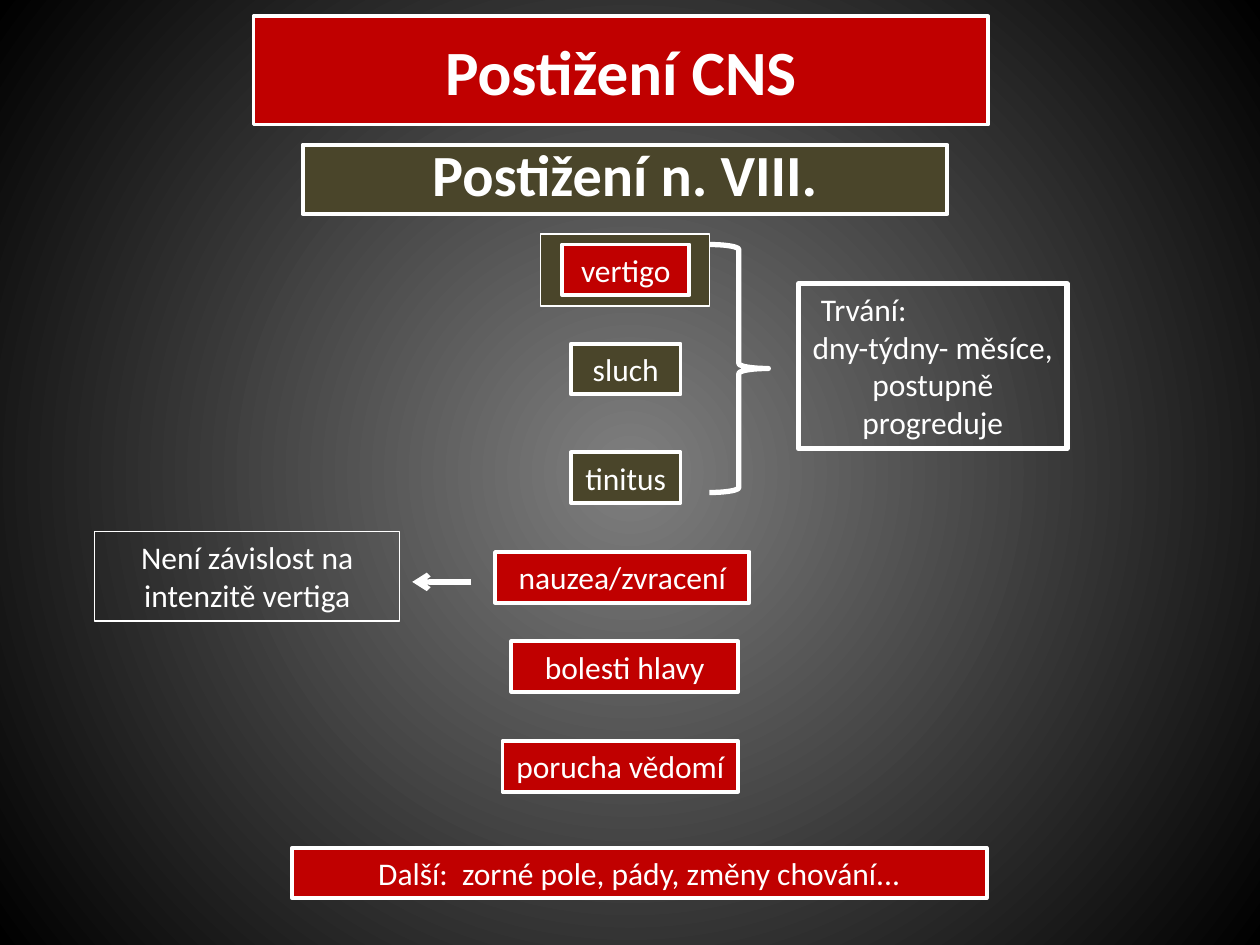
from dataclasses import dataclass

from lxml import etree
from pptx import Presentation
from pptx import util as u
from pptx.dml.color import RGBColor
from pptx.enum import shapes, text
from pptx.oxml.ns import qn


@dataclass(frozen=True)
class Theme:
    font: str = "Calibri"
    red: str = "C00000"
    olive: str = "4A452A"
    white: str = "FFFFFF"
    glow: str = "7F7F7F"
    dark: str = "000000"
    title: float = 36
    subtitle: float = 33.3
    body: float = 18
    thin: float = 0.75
    medium: float = 2.25
    thick: float = 3


THEME = Theme()


@dataclass(frozen=True)
class Label:
    """A filled or hollow box; lengths in centimetres."""
    left: float
    top: float
    width: float
    height: float = 1.02
    lines: tuple[str, ...] = ()
    fill: str | None = THEME.red
    border: float = THEME.medium
    size: float = THEME.body
    heading: bool = False


def set_all(target, values: dict) -> None:
    for name, value in values.items():
        setattr(target, name, value)


def outline(shape, width: float) -> None:
    shape.line.color.rgb = RGBColor.from_string(THEME.white)
    shape.line.width = u.Pt(width)


def write(box, label: Label) -> None:
    fitting = text.MSO_AUTO_SIZE.NONE if label.heading else text.MSO_AUTO_SIZE.SHAPE_TO_FIT_TEXT
    anchor = text.MSO_ANCHOR.MIDDLE if label.heading else text.MSO_ANCHOR.TOP
    frame = box.text_frame
    set_all(frame, {"word_wrap": True, "auto_size": fitting, "vertical_anchor": anchor})
    for index, line in enumerate(label.lines):
        para = frame.add_paragraph() if index else frame.paragraphs[0]
        para.alignment = text.PP_ALIGN.CENTER
        span = para.add_run()
        span.text = line
        set_all(span.font, {"name": THEME.font, "size": u.Pt(label.size), "bold": label.heading})
        span.font.color.rgb = RGBColor.from_string(THEME.white)


def place(box, label: Label):
    """Position, colour and fill in any box, placeholder or shape."""
    set_all(box, {name: u.Cm(getattr(label, name)) for name in ("left", "top", "width", "height")})
    if label.fill:
        box.fill.solid()
        box.fill.fore_color.rgb = RGBColor.from_string(label.fill)
    else:
        box.fill.background()
    outline(box, label.border)
    write(box, label)
    return box


def add_shape(page, label: Label, kind=shapes.MSO_SHAPE.RECTANGLE):
    box = page.shapes.add_shape(kind, 0, 0, 0, 0)
    box.shadow.inherit = False
    return place(box, label)


def add_arrow(page, start: float, end: float, level: float) -> None:
    arrow = page.shapes.add_connector(
        shapes.MSO_CONNECTOR.STRAIGHT, u.Cm(start), u.Cm(level), u.Cm(end), u.Cm(level))
    outline(arrow, THEME.thick)
    etree.SubElement(arrow.line._get_or_add_ln(), qn("a:tailEnd"), type="arrow")
    etree.SubElement(arrow._element.spPr, qn("a:effectLst"))


def paint_background(page) -> None:
    """Radial gradient, light in the middle."""
    fill = page.background.fill
    fill.gradient()
    for stop, colour in zip(fill.gradient_stops, (THEME.glow, THEME.dark)):
        stop.color.rgb = RGBColor.from_string(colour)
    gradient = page._element.find(".//" + qn("a:gradFill"))
    linear = gradient.find(qn("a:lin"))
    radial = etree.Element(qn("a:path"), path="circle")
    etree.SubElement(radial, qn("a:fillToRect"), {side: "50000" for side in "ltrb"})
    gradient.replace(linear, radial)


TITLE = Label(5.11, 0.33, 14.81, 2.18, ("Postižení CNS",), size=THEME.title, heading=True)
SUBTITLE = Label(6.1, 2.92, 13, 1.4, ("Postižení n. VIII.",), THEME.olive,
                 size=THEME.subtitle, heading=True)
VERTIGO_FRAME = Label(10.9, 4.72, 3.4, 1.45, fill=THEME.olive, border=THEME.thin)
SYMPTOMS = (
    Label(11.33, 4.93, 2.57, lines=("vertigo",)),
    Label(11.51, 6.93, 2.21, lines=("sluch",), fill=THEME.olive),
    Label(11.51, 9.12, 2.21, lines=("tinitus",), fill=THEME.olive),
    Label(9.98, 11.13, 5.13, lines=("nauzea/zvracení",)),
    Label(10.31, 12.93, 4.57, lines=("bolesti hlavy",)),
    Label(10.13, 14.94, 4.75, lines=("porucha vědomí",)),
    Label(5.89, 17.09, 14, lines=("Další:  zorné pole, pády, změny chování...",)),
)
DURATION = Label(16.1, 5.72, 5.41, 3.33,
                 ("Trvání:", "dny-týdny- měsíce,", "postupně progreduje"),
                 None, THEME.thick)
INDEPENDENCE = Label(1.91, 10.72, 6.15, 1.8, ("Není závislost na intenzitě vertiga",),
                     None, THEME.thin)
BRACE = Label(14.3, 4.93, 1.19, 5, fill=None, border=THEME.thick)


def main() -> None:
    deck = Presentation()
    set_all(deck, {"slide_width": u.Cm(25.4), "slide_height": u.Cm(19.05)})
    page = deck.slides.add_slide(deck.slide_layouts[5])
    paint_background(page)

    # Headings
    place(page.shapes.title, TITLE)
    subtitle = add_shape(page, SUBTITLE)
    subtitle.text_frame.paragraphs[0].line_spacing = 0.8

    # Symptoms, with vertigo set in a frame
    for label in (VERTIGO_FRAME, *SYMPTOMS):
        add_shape(page, label)

    # Duration of the first three symptoms
    add_shape(page, BRACE, shapes.MSO_SHAPE.RIGHT_BRACE)
    duration = add_shape(page, DURATION)
    heading = duration.text_frame.paragraphs[0]
    heading.alignment = text.PP_ALIGN.LEFT
    heading._p.get_or_add_pPr().set("indent", str(u.Cm(0.2)))

    # Remark on nausea
    add_shape(page, INDEPENDENCE)
    add_arrow(page, 9.5, 8.31, 11.73)

    deck.save("out.pptx")


if __name__ == "__main__":
    main()
